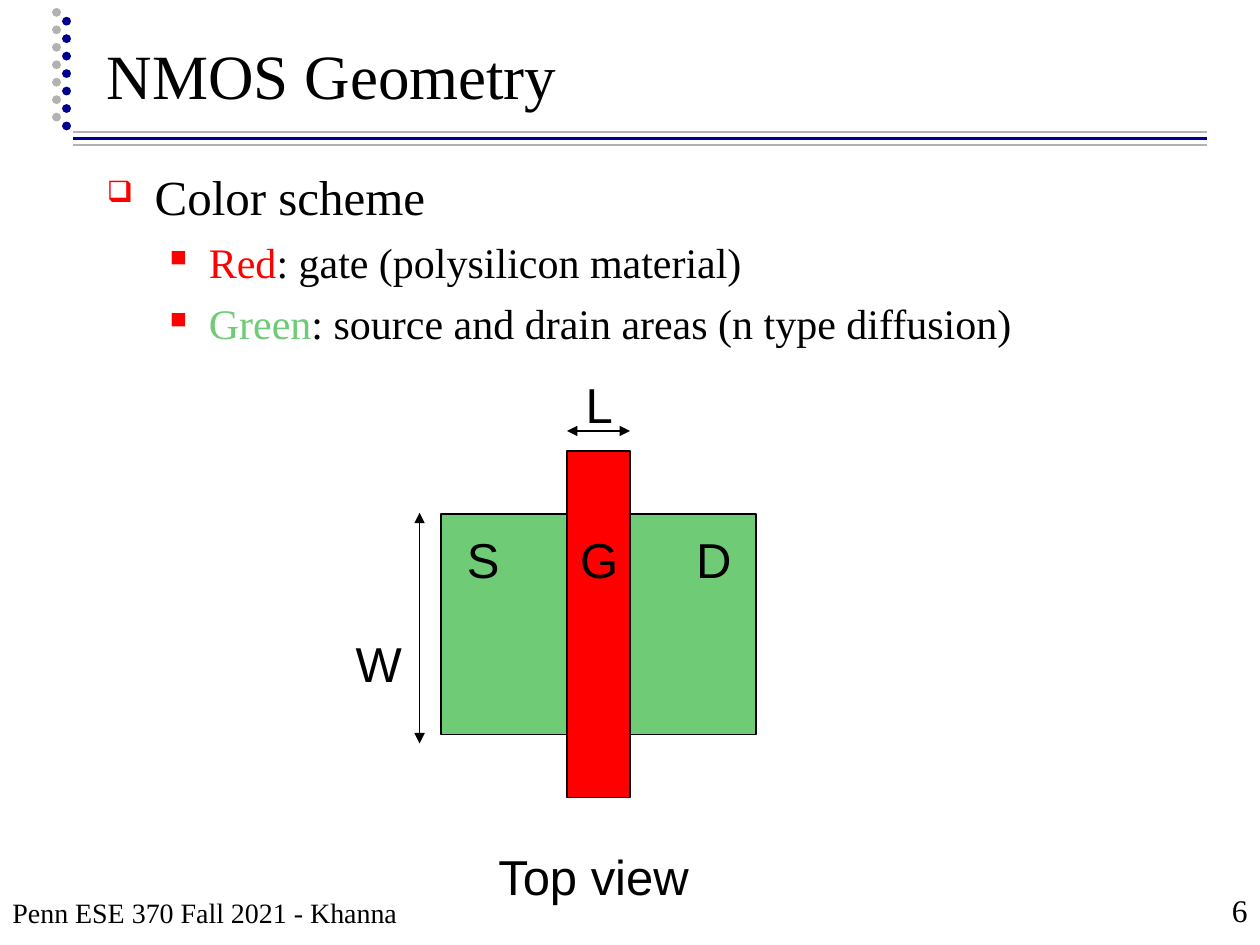
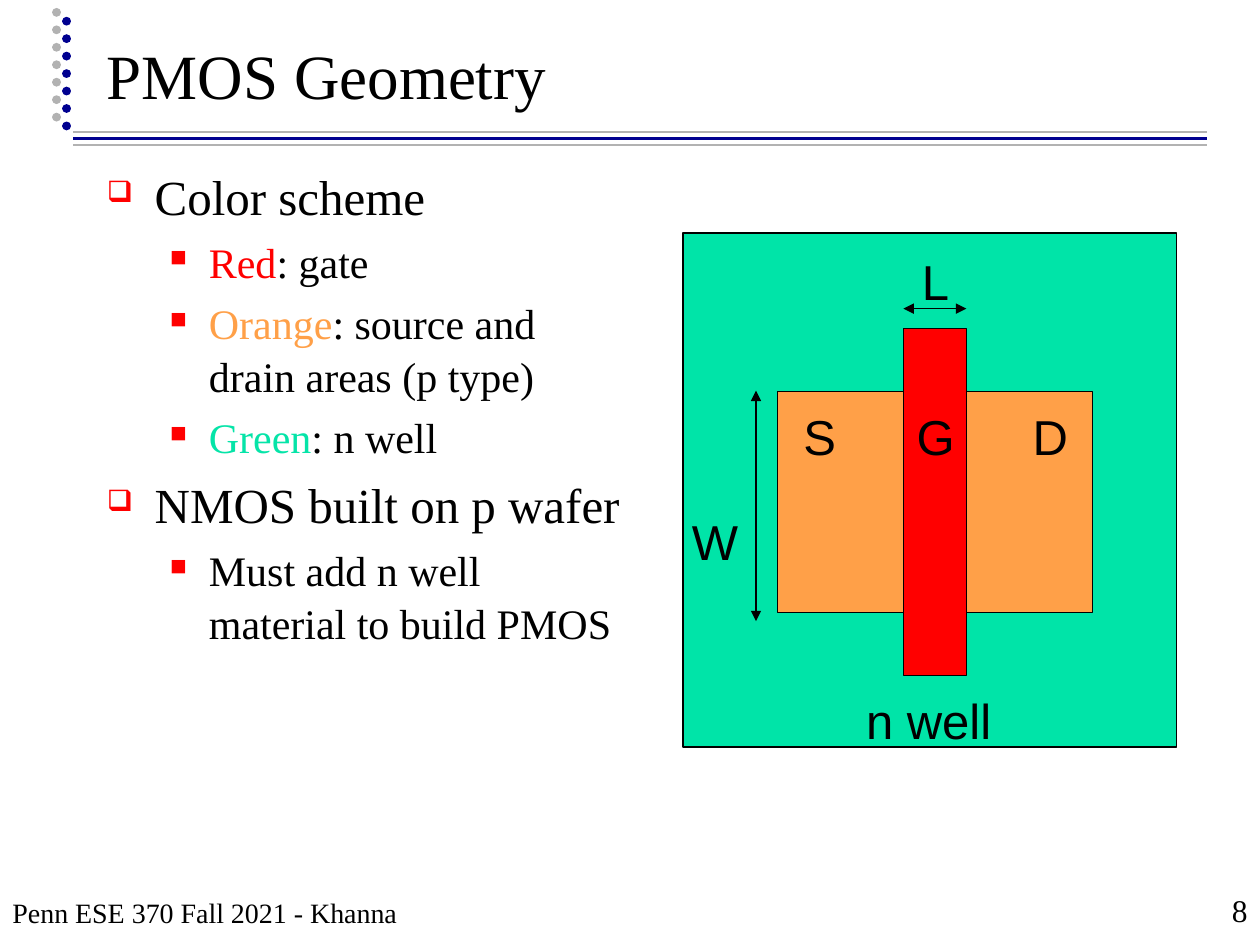
"""Build two slides on transistor geometry."""
import dataclasses

import lxml.etree
import pptx
import pptx.dml.color
import pptx.enum.dml
import pptx.enum.shapes
import pptx.enum.text
import pptx.oxml.ns
import pptx.util

Inches = pptx.util.Inches
Pt = pptx.util.Pt
ALIGN = pptx.enum.text.PP_ALIGN
ANCHOR = pptx.enum.text.MSO_ANCHOR


@dataclasses.dataclass(frozen=True)
class Theme:
    black: str = "000000"
    navy: str = "000090"
    gray: str = "B2B2B2"
    red: str = "FF0000"
    n_diffusion: str = "6FCB75"
    p_diffusion: str = "FFA048"
    well: str = "00E4A8"
    well_text: str = "05E4A8"
    serif: str = "Times New Roman"
    sans: str = "Arial"
    title_size: int = 36
    label_size: int = 28
    footer_size: int = 16
    number_size: int = 18
    outline: float = 0.75


THEME = Theme()
LEVELS = (
    {"size": 28, "margin": 0.38, "hang": 0.38, "bullet": "❑", "percent": 60},
    {"size": 24, "margin": 0.81, "hang": 0.31, "bullet": "■", "percent": 55},
)


def rgb(value):
    return pptx.dml.color.RGBColor.from_string(value)


def apply_format(target, values):
    for name, value in values.items():
        setattr(target, name, value)


def add_child(parent, tag, **attributes):
    child = lxml.etree.SubElement(parent, pptx.oxml.ns.qn(tag))
    for name, value in attributes.items():
        child.set(name, str(value))
    return child


def add_span(para, text, size, font, color=THEME.black):
    span = para.add_run()
    span.text = text
    apply_format(span.font, {"size": Pt(size), "name": font})
    span.font.color.rgb = rgb(color)


def add_box(page, left, top, width, height, anchor=ANCHOR.TOP):
    box = page.shapes.add_textbox(Inches(left), Inches(top), Inches(width), Inches(height))
    apply_format(box.text_frame, {"word_wrap": True, "vertical_anchor": anchor})
    return box.text_frame


def add_text(page, place, text, size, font=THEME.serif, anchor=ANCHOR.BOTTOM, **paragraph):
    para = add_box(page, *place, anchor).paragraphs[0]
    apply_format(para, paragraph)
    add_span(para, text, size, font)


def add_label(page, left, top, text, width=0.67):
    add_text(page, (left, top, width, 0.57), text, THEME.label_size, THEME.sans,
             ANCHOR.TOP, alignment=ALIGN.CENTER, space_before=Pt(3))


def add_rectangle(page, left, top, width, height, color):
    shape = page.shapes.add_shape(
        pptx.enum.shapes.MSO_SHAPE.RECTANGLE,
        Inches(left), Inches(top), Inches(width), Inches(height))
    shape.shadow.inherit = False
    shape.fill.solid()
    shape.fill.fore_color.rgb = rgb(color)
    shape.line.color.rgb = rgb(THEME.black)
    shape.line.width = Pt(THEME.outline)


def add_line(page, start, end, color, width, dotted=False, arrows=False):
    line = page.shapes.add_connector(
        pptx.enum.shapes.MSO_CONNECTOR.STRAIGHT,
        *(Inches(value) for value in (*start, *end)))
    line.line.color.rgb = rgb(color)
    line.line.width = Pt(width)
    properties = line._element.spPr
    outline = properties.find(pptx.oxml.ns.qn("a:ln"))
    if dotted:
        line.line.dash_style = pptx.enum.dml.MSO_LINE.ROUND_DOT
        outline.set("cap", "rnd")
    if arrows:
        for tag in ("a:headEnd", "a:tailEnd"):
            add_child(outline, tag, type="triangle")
    add_child(properties, "a:effectLst")


def add_bullets(page, width, items):
    frame = add_box(page, 0.75, 1.25, width, 5.5)
    for index, (level, spans) in enumerate(items):
        para = frame.add_paragraph() if index else frame.paragraphs[0]
        style = LEVELS[level]
        spacing = 0.2 * style["size"] if index else 0
        apply_format(para, {"level": level, "line_spacing": 1.05, "space_before": Pt(spacing)})
        properties = para._p.get_or_add_pPr()
        properties.set("marL", str(Inches(style["margin"])))
        properties.set("indent", str(-Inches(style["hang"])))
        add_child(add_child(properties, "a:buClr"), "a:srgbClr", val=THEME.red)
        add_child(properties, "a:buSzPct", val=style["percent"] * 1000)
        add_child(properties, "a:buChar", char=style["bullet"])
        for text, color in spans:
            add_span(para, text, style["size"], THEME.serif, color)


def add_transistor(page, left, top, color):
    """Draw a top view whose diffusion area starts at left, top."""
    add_rectangle(page, left, top, 2.5, 1.75, color)
    add_rectangle(page, left + 1, top - 0.5, 0.5, 2.75, THEME.red)
    length_y, width_x = top - 0.66, left - 0.17
    for start, end in (((left + 1, length_y), (left + 1.5, length_y)),
                       ((width_x, top - 0.01), (width_x, top + 1.82))):
        add_line(page, start, end, THEME.black, THEME.outline, arrows=True)
    for text, across, down in (("L", 0.92, -1.16), ("W", -0.83, 0.9), ("S", 0, 0.07),
                               ("D", 1.83, 0.07), ("G", 0.92, 0.07)):
        add_label(page, left + across, top + down, text)


def add_page(deck, title, number):
    """Add a blank slide with the shared rules, dots, title and footer."""
    page = deck.slides.add_slide(deck.slide_layouts[6])
    for y, color, width in ((1.1, THEME.navy, 2), (1.15, THEME.gray, 1), (1.05, THEME.gray, 1)):
        add_line(page, (0.58, y), (9.58, y), color, width)
    for x, bottom, color in ((0.45, 0.93, THEME.gray), (0.53, 1, THEME.navy)):
        add_line(page, (x, bottom), (x, bottom - 0.92), color, 5, dotted=True)
    add_text(page, (0.75, 0.11, 8.52, 0.83), title, THEME.title_size)
    add_text(page, (0, 6.92, 5.42, 0.5), "Penn ESE 370 Fall 2021 - Khanna", THEME.footer_size)
    add_text(page, (7.92, 6.92, 2.08, 0.5), str(number), THEME.number_size,
             alignment=ALIGN.RIGHT)
    return page


def color_item(name, color, meaning):
    return 1, [(name, color), (f": {meaning}", THEME.black)]


def plain_item(level, text):
    return level, [(text, THEME.black)]


def build_nmos(deck):
    page = add_page(deck, "NMOS Geometry", 6)
    add_bullets(page, 8.5, [
        plain_item(0, "Color scheme"),
        color_item("Red", THEME.red, "gate (polysilicon material)"),
        color_item("Green", THEME.n_diffusion, "source and drain areas (n type diffusion)"),
    ])
    add_label(page, 2.92, 6.67, "Top view", 3.58)
    add_transistor(page, 3.5, 4.08, THEME.n_diffusion)


def build_pmos(deck):
    page = add_page(deck, "PMOS Geometry", 8)
    add_rectangle(page, 5.42, 1.85, 3.92, 4.08, THEME.well)
    add_bullets(page, 4.33, [
        plain_item(0, "Color scheme"),
        color_item("Red", THEME.red, "gate"),
        color_item("Orange", THEME.p_diffusion, "source and drain areas (p type)"),
        color_item("Green", THEME.well_text, "n well"),
        plain_item(0, "NMOS built on p wafer"),
        plain_item(1, "Must add n well material to build PMOS"),
    ])
    add_label(page, 5.58, 5.43, "n well", 3.58)
    add_transistor(page, 6.17, 3.11, THEME.p_diffusion)


def main():
    deck = pptx.Presentation()
    apply_format(deck, {"slide_width": Inches(10), "slide_height": Inches(7.5)})
    build_nmos(deck)
    build_pmos(deck)
    deck.save("out.pptx")


if __name__ == "__main__":
    main()
